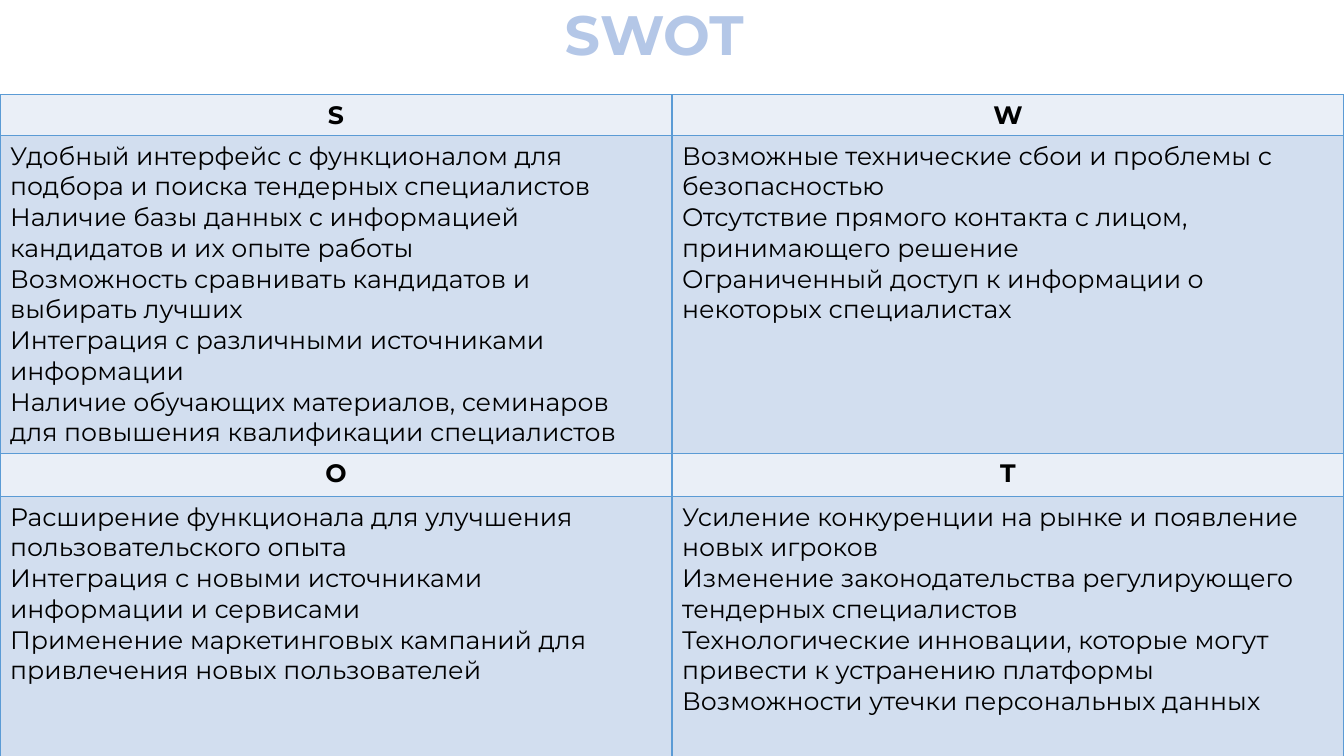
from lxml import etree
from pptx import Presentation
from pptx.dml.color import RGBColor
from pptx.enum.text import MSO_ANCHOR, MSO_AUTO_SIZE, PP_ALIGN
from pptx.oxml.ns import qn
from pptx.util import Inches, Pt

LEFT, CENTER = PP_ALIGN.LEFT, PP_ALIGN.CENTER
MIDDLE = MSO_ANCHOR.MIDDLE
NO_FIT = MSO_AUTO_SIZE.NONE
TITLE_ONLY = 5

FONT = "Montserrat"
BLACK = RGBColor(0x00, 0x00, 0x00)
PALE = RGBColor(0xB4, 0xC7, 0xE7)
HEAD = RGBColor(0xEA, 0xEF, 0xF7)
BODY = RGBColor(0xD2, 0xDE, 0xEF)
EDGE = RGBColor(0x5B, 0x9B, 0xD5)

WIDTH, HEIGHT = 13.33, 7.5
ROWS = [0.4, 2.99, 0.43, 2.68]

SWOT = {
    "S": [
        "Удобный интерфейс с функционалом для подбора и поиска тендерных специалистов",
        "Наличие базы данных с информацией кандидатов и их опыте работы",
        "Возможность сравнивать кандидатов и выбирать лучших",
        "Интеграция с различными источниками информации",
        "Наличие обучающих материалов, семинаров для повышения квалификации специалистов",
    ],
    "W": [
        "Возможные технические сбои и проблемы с безопасностью",
        "Отсутствие прямого контакта с лицом, принимающего решение",
        "Ограниченный доступ к информации о некоторых специалистах",
    ],
    "O": [
        "Расширение функционала для улучшения пользовательского опыта",
        "Интеграция с новыми источниками информации и сервисами",
        "Применение маркетинговых кампаний для привлечения новых пользователей",
    ],
    "T": [
        "Усиление конкуренции на рынке и появление новых игроков",
        "Изменение законодательства регулирующего тендерных специалистов",
        "Технологические инновации, которые могут привести к устранению платформы",
        "Возможности утечки персональных данных",
    ],
}


def style(frame, size, color, bold, align):
    for para in frame.paragraphs:
        para.alignment = align
        for run in para.runs:
            font = run.font
            font.name, font.size, font.bold = FONT, Pt(size), bold
            font.color.rgb = color


def add_title(slide, text):
    title = slide.shapes.title
    title.left, title.top = Inches(5.5), Inches(0)
    title.width, title.height = Inches(2.98), Inches(0.75)
    frame = title.text_frame
    frame.text = text
    frame.auto_size = NO_FIT
    frame.word_wrap = True
    frame.vertical_anchor = MIDDLE
    frame.paragraphs[0].line_spacing = 0.9
    style(frame, 39.6, PALE, True, LEFT)


def add_edges(cell):
    """Draw a thin line on all four sides of the cell."""
    props = cell._tc.get_or_add_tcPr()
    for spot, side in enumerate(("lnL", "lnR", "lnT", "lnB")):
        line = etree.Element(qn(f"a:{side}"), w=str(Pt(1)))
        fill = etree.SubElement(line, qn("a:solidFill"))
        etree.SubElement(fill, qn("a:srgbClr"), val=str(EDGE))
        props.insert(spot, line)


def fill_cell(cell, lines, color, bold, align):
    cell.text_frame.text = "\n".join(lines)
    style(cell.text_frame, 18, BLACK, bold, align)
    cell.fill.solid()
    cell.fill.fore_color.rgb = color
    add_edges(cell)


def add_swot(slide):
    table = slide.shapes.add_table(
        len(ROWS), 2, Inches(0), Inches(0.94), Inches(WIDTH), Inches(sum(ROWS))
    ).table
    for row, height in zip(table.rows, ROWS):
        row.height = Inches(height)
    for index, (letter, points) in enumerate(SWOT.items()):
        pair, col = divmod(index, 2)
        fill_cell(table.cell(2 * pair, col), [letter], HEAD, True, CENTER)
        fill_cell(table.cell(2 * pair + 1, col), points, BODY, False, LEFT)


def main():
    deck = Presentation()
    deck.slide_width, deck.slide_height = Inches(WIDTH), Inches(HEIGHT)
    slide = deck.slides.add_slide(deck.slide_layouts[TITLE_ONLY])
    add_title(slide, "SWOT")
    add_swot(slide)
    deck.save("out.pptx")


if __name__ == "__main__":
    main()
